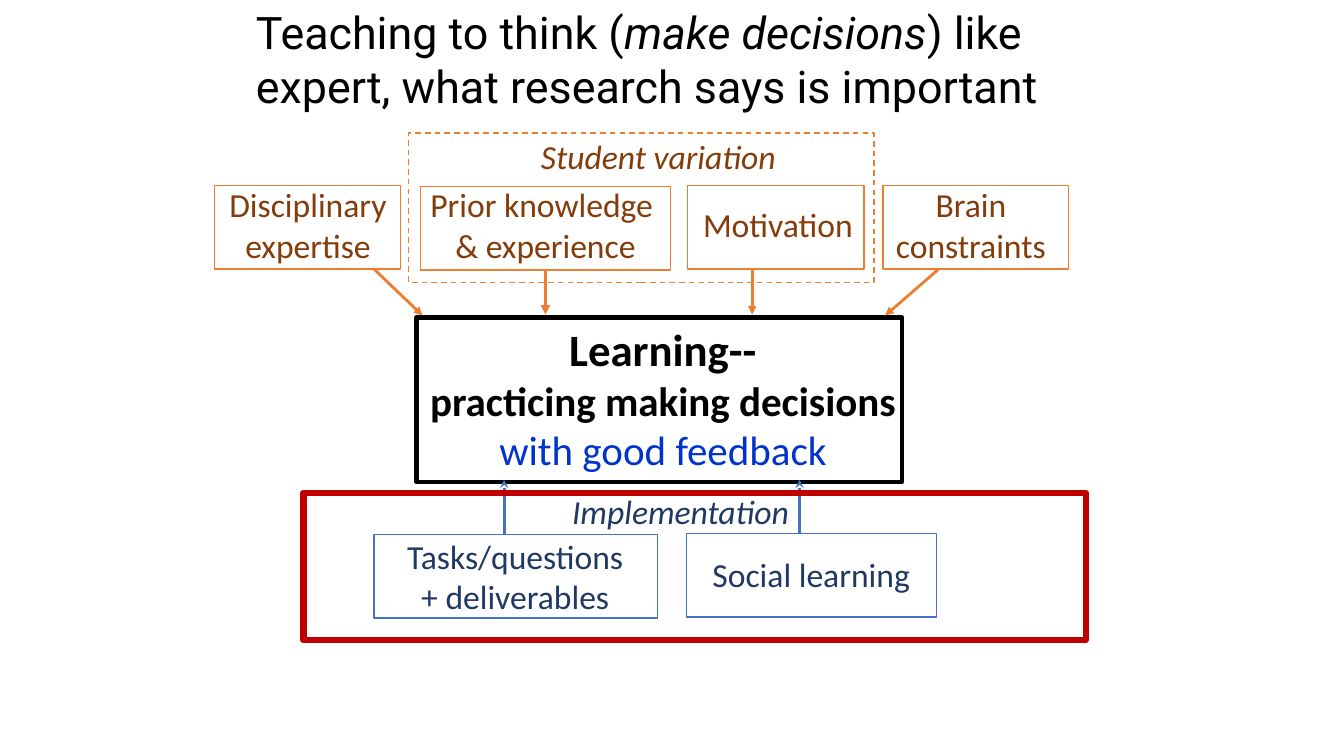
from dataclasses import dataclass

from lxml.etree import SubElement
from pptx import Presentation
from pptx.dml.color import RGBColor
from pptx.enum.dml import MSO_LINE
from pptx.enum.shapes import MSO_CONNECTOR, MSO_SHAPE
from pptx.enum.text import MSO_ANCHOR, PP_ALIGN
from pptx.oxml.ns import qn
from pptx.util import Inches, Pt


@dataclass(frozen=True)
class Theme:
    body_font: str = "Calibri"
    title_font: str = "Roboto"
    black: str = "000000"
    white: str = "FFFFFF"
    orange: str = "ED7D31"
    brown: str = "843C0B"
    blue: str = "4472C4"
    navy: str = "203864"
    feedback_blue: str = "0033CC"
    red: str = "C00000"
    heading_size: float = 32
    practice_size: float = 29.3
    label_size: float = 24


theme = Theme()
presentation = Presentation()
presentation.slide_width = Inches(13.33)
presentation.slide_height = Inches(7.5)
slide = presentation.slides.add_slide(presentation.slide_layouts[6])


def add_frame(at, color, width):
    shape = slide.shapes.add_shape(MSO_SHAPE.RECTANGLE, *map(Inches, at))
    shape.shadow.inherit = False
    shape.fill.background()
    shape.line.color.rgb = RGBColor.from_string(color)
    shape.line.width = Pt(width)
    return shape


def add_text(at, text, color, size=theme.label_size, font=theme.body_font,
             align=PP_ALIGN.CENTER, wrap=True, side=0.07, top=0.05):
    """Each line of text is a paragraph; a | starts a new run."""
    text_frame = slide.shapes.add_textbox(*map(Inches, at)).text_frame
    text_frame.word_wrap = wrap
    text_frame.margin_left = text_frame.margin_right = Inches(side)
    text_frame.margin_top = text_frame.margin_bottom = Inches(top)
    text_frame.text = text.replace("|", "")
    for paragraph, line in zip(text_frame.paragraphs, text.split("\n")):
        paragraph.alignment = align
        first, *others = line.split("|")
        paragraph.runs[0].text = first
        for part in others:
            paragraph.add_run().text = part
        for run in paragraph.runs:
            run.font.name = font
            run.font.size = Pt(size)
            run.font.color.rgb = RGBColor.from_string(color)
    return text_frame


# Learning box in the centre
learning_box = add_frame((4.13, 3.15, 4.82, 1.63), theme.black, 3)
learning_box.fill.solid()
learning_box.fill.fore_color.rgb = RGBColor.from_string(theme.white)
learning = add_text((4.13, 3.12, 4.89, 1.65),
                    "Learning--\npracticing making decisions |with good feedback",
                    theme.black, theme.heading_size, top=0.07)
heading, practice = learning.paragraphs
heading.runs[0].font.bold = True
practice.runs[0].font.bold = True
for run in practice.runs:
    run.font.size = Pt(theme.practice_size)
practice.runs[1].font.color.rgb = RGBColor.from_string(theme.feedback_blue)

# Factors above: text, text position, box position
factors = [
    ("Prior knowledge \n& experience", (4.19, 1.78, 2.44, 0.91), (4.17, 1.85, 2.48, 0.83)),
    ("Motivation", (6.89, 1.97, 1.65, 0.5), (6.82, 1.84, 1.75, 0.83)),
    ("Disciplinary\nexpertise", (2.2, 1.78, 1.71, 0.91), (2.13, 1.84, 1.84, 0.83)),
    ("Brain\nconstraints", (8.76, 1.78, 1.74, 0.91), (8.76, 1.84, 1.84, 0.83)),
]
for text, text_at, box_at in factors:
    add_text(text_at, text, theme.brown, wrap=False)
    add_frame(box_at, theme.orange, 1)

# Student variation group
variation = add_text((5.28, 1.3, 2.5, 0.5), "Student variation", theme.brown, wrap=False)
variation.paragraphs[0].runs[0].font.italic = True
variation_frame = add_frame((4.05, 1.32, 4.62, 1.48), theme.orange, 1)
variation_frame.line.dash_style = MSO_LINE.DASH

# Implementation methods below
methods = [
    ("Social learning", (6.8, 5.45, 2.49, 0.5), (6.81, 5.29, 2.48, 0.83)),
    ("Tasks/questions\n+ deliverables", (3.7, 5.24, 2.82, 0.95), (3.71, 5.3, 2.81, 0.83)),
]
for text, text_at, box_at in methods:
    add_text(text_at, text, theme.navy).vertical_anchor = MSO_ANCHOR.MIDDLE
    add_frame(box_at, theme.blue, 1)
implementation = add_text((5.28, 4.82, 2.94, 0.5), "Implementation", theme.navy)
implementation.paragraphs[0].runs[0].font.italic = True

# Arrows into the learning box: start, end, colour, width, head
arrows = [
    ((3.71, 2.67), (4.19, 3.13), theme.orange, 2, "triangle"),
    ((9.31, 2.67), (8.78, 3.13), theme.orange, 2, "triangle"),
    ((5.41, 2.67), (5.41, 3.12), theme.orange, 2.25, "triangle"),
    ((7.46, 2.67), (7.46, 3.12), theme.orange, 2, "triangle"),
    ((7.93, 5.3), (7.93, 4.76), theme.blue, 2, "stealth"),
    ((5, 5.3), (5, 4.76), theme.blue, 2, "stealth"),
]
for start, end, color, width, head in arrows:
    arrow = slide.shapes.add_connector(MSO_CONNECTOR.STRAIGHT, *map(Inches, start + end))
    arrow.line.color.rgb = RGBColor.from_string(color)
    arrow.line.width = Pt(width)
    SubElement(arrow.line._get_or_add_ln(), qn("a:tailEnd"), type=head)
    SubElement(arrow._element.spPr, qn("a:effectLst"))

# Title
title = add_text((2.44, 0, 8.62, 1.18),
                 "Teaching to think (|make decisions|) like expert, "
                 "what research says is important",
                 theme.black, theme.heading_size, theme.title_font,
                 PP_ALIGN.LEFT, side=0.1)
title.paragraphs[0].runs[1].font.italic = True

# Red highlight around the implementation part
add_frame((3.01, 4.89, 7.76, 1.46), theme.red, 4.5)

presentation.save("out.pptx")
